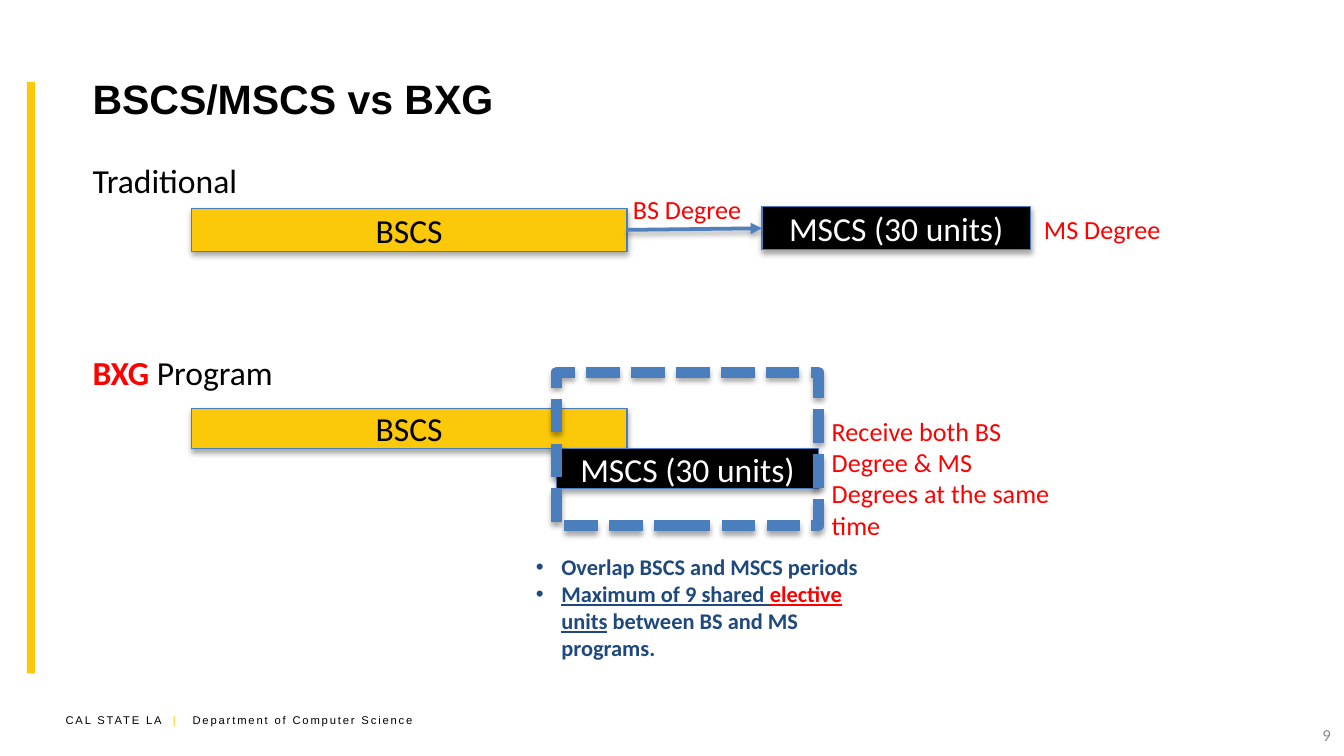
from lxml.etree import SubElement
from pptx import Presentation
from pptx.dml.color import RGBColor
from pptx.enum.dml import MSO_LINE
from pptx.enum.shapes import MSO_CONNECTOR, MSO_SHAPE
from pptx.enum.text import MSO_ANCHOR, PP_ALIGN
from pptx.oxml.ns import qn
from pptx.util import Cm, Pt

COLORS = {
    "gold": "FCC90A", "black": "000000", "white": "FFFFFF", "red": "FF0000",
    "navy": "1F497D", "outline": "4B7EBC", "arrow": "4F81BD", "gray": "8C8C8C",
}


def rgb(name):
    return RGBColor.from_string(COLORS[name])


def add_text(left, top, width, height, runs, size, color="black", font="Calibri",
             bold=False, wrap=False, anchor=MSO_ANCHOR.TOP):
    """Add a text box; each run is (text, color), or (text, None) to use the paragraph's color."""
    frame = slide.shapes.add_textbox(Cm(left), Cm(top), Cm(width), Cm(height)).text_frame
    frame.word_wrap = wrap
    frame.vertical_anchor = anchor
    paragraph = frame.paragraphs[0]
    paragraph.font.name = font
    paragraph.font.size = Pt(size)
    paragraph.font.bold = bold
    paragraph.font.color.rgb = rgb(color)
    for text, run_color in runs:
        run = paragraph.add_run()
        run.text = text
        if run_color:
            run.font.color.rgb = rgb(run_color)
    return frame


presentation = Presentation()
presentation.slide_width = Cm(25.4)
presentation.slide_height = Cm(14.29)
slide = presentation.slides.add_slide(presentation.slide_layouts[6])

# Side bar
side_bar = slide.shapes.add_shape(MSO_SHAPE.RECTANGLE, Cm(0.51), Cm(1.55), Cm(0.15), Cm(11.18))
side_bar.shadow.inherit = False
side_bar.fill.solid()
side_bar.fill.fore_color.rgb = rgb("gold")
side_bar.line.fill.background()

# Footer and page number
footer = add_text(0.99, 13.36, 7.42, 0.51,
                  [("CAL STATE LA ", None), (" |\t", "gold"),
                   ("Department of Computer Science", None)], 6, font="Arial")
footer_line = footer.paragraphs[0]
tab_stops = SubElement(footer_line._p.get_or_add_pPr(), qn("a:tabLst"))
footer_line._p.pPr.insert(0, tab_stops)
SubElement(tab_stops, qn("a:tab"), pos=str(Cm(2.4)), algn="l")
for run in footer_line.runs:
    run.font._element.set("spc", "100")

page_number = add_text(19.48, 13.51, 5.92, 0.76, [("9", None)], 9, "gray",
                       wrap=True, anchor=MSO_ANCHOR.MIDDLE)
page_number.paragraphs[0].alignment = PP_ALIGN.RIGHT

# Title and headings
add_text(1.5, 0.66, 22.61, 2.39, [("BSCS/MSCS vs BXG", None)], 22, font="Arial",
         bold=True, wrap=True, anchor=MSO_ANCHOR.MIDDLE)
add_text(1.5, 2.9, 3.28, 1.02, [("Traditional", None)], 18)
bxg_heading = add_text(1.5, 6.53, 3.91, 1.02, [("BXG", "red"), (" Program", None)], 18)
bxg_heading.paragraphs[0].runs[0].font.bold = True

# Degree periods: left, top, width, height, label, fill, text color
periods = []
for left, top, width, height, label, fill, color in [
    (3.62, 3.94, 8.23, 0.81, "BSCS", "gold", "black"),
    (14.4, 3.91, 5.08, 0.81, "MSCS (30 units)", "black", "white"),
    (3.62, 7.72, 8.23, 0.76, "BSCS", "gold", "black"),
    (10.52, 8.48, 4.95, 0.76, "MSCS (30 units)", "black", "white"),
]:
    period = slide.shapes.add_shape(MSO_SHAPE.RECTANGLE, Cm(left), Cm(top), Cm(width), Cm(height))
    period.fill.solid()
    period.fill.fore_color.rgb = rgb(fill)
    period.line.color.rgb = rgb("outline")
    period.line.width = Pt(0.75)
    period.text_frame.vertical_anchor = MSO_ANCHOR.MIDDLE
    paragraph = period.text_frame.paragraphs[0]
    paragraph.text = label
    paragraph.alignment = PP_ALIGN.CENTER
    paragraph.font.name = "Calibri"
    paragraph.font.size = Pt(18)
    paragraph.font.color.rgb = rgb(color)
    periods.append(period)

# Arrow from the bachelor's to the master's period
arrow = slide.shapes.add_connector(MSO_CONNECTOR.STRAIGHT, 0, 0, 0, 0)
arrow.begin_connect(periods[0], 3)
arrow.end_connect(periods[1], 1)
arrow.line.color.rgb = rgb("arrow")
arrow.line.width = Pt(2)
SubElement(arrow._element.spPr.find(qn("a:ln")), qn("a:tailEnd"), type="triangle")

# Dashed frame around the overlap
overlap = slide.shapes.add_shape(MSO_SHAPE.RECTANGLE, Cm(10.52), Cm(7.04), Cm(4.95), Cm(2.9))
overlap.fill.background()
overlap.line.color.rgb = rgb("outline")
overlap.line.width = Pt(6)
overlap.line.dash_style = MSO_LINE.SQUARE_DOT

# Soft shadow below the diagram parts
for part in [*periods, arrow, overlap]:
    effects = SubElement(part._element.spPr, qn("a:effectLst"))
    shadow = SubElement(effects, qn("a:outerShdw"), blurRad=str(Pt(3.1)), dist=str(Pt(1.8)),
                        dir="5400000", rotWithShape="0")
    shadow_color = SubElement(shadow, qn("a:srgbClr"), val=COLORS["black"])
    SubElement(shadow_color, qn("a:alpha"), val="35000")

# Degree labels
add_text(11.71, 3.53, 2.59, 0.86, [("BS Degree", None)], 14, "red")
add_text(19.48, 3.91, 2.74, 0.86, [("MS Degree", None)], 14, "red")
add_text(15.47, 7.72, 4.72, 2.64,
         [("Receive both BS Degree & MS Degrees at the same time", None)], 14, "red", wrap=True)

# Notes on the overlap: text, underlined, color
notes = slide.shapes.add_textbox(Cm(9.88), Cm(10.34), Cm(7.06), Cm(2.31)).text_frame
notes.word_wrap = True
for index, runs in enumerate([
    [("Overlap BSCS and MSCS periods", False, "navy")],
    [("Maximum of\u00a09 shared ", True, "navy"), ("elective", True, "red"),
     (" units", True, "navy"), (" between BS and MS programs.", False, "navy")],
]):
    note = notes.add_paragraph() if index else notes.paragraphs[0]
    properties = note._p.get_or_add_pPr()
    properties.set("marL", str(Cm(0.48)))
    properties.set("indent", str(-Cm(0.48)))
    SubElement(properties, qn("a:buFont"), typeface="Arial")
    SubElement(properties, qn("a:buChar"), char="•")
    note.font.name = "Calibri"
    note.font.size = Pt(12)
    note.font.bold = True
    note.font.color.rgb = rgb("navy")
    for text, underlined, color in runs:
        run = note.add_run()
        run.text = text
        if underlined:
            run.font.underline = True
        if color != "navy":
            run.font.color.rgb = rgb(color)

presentation.save("out.pptx")
